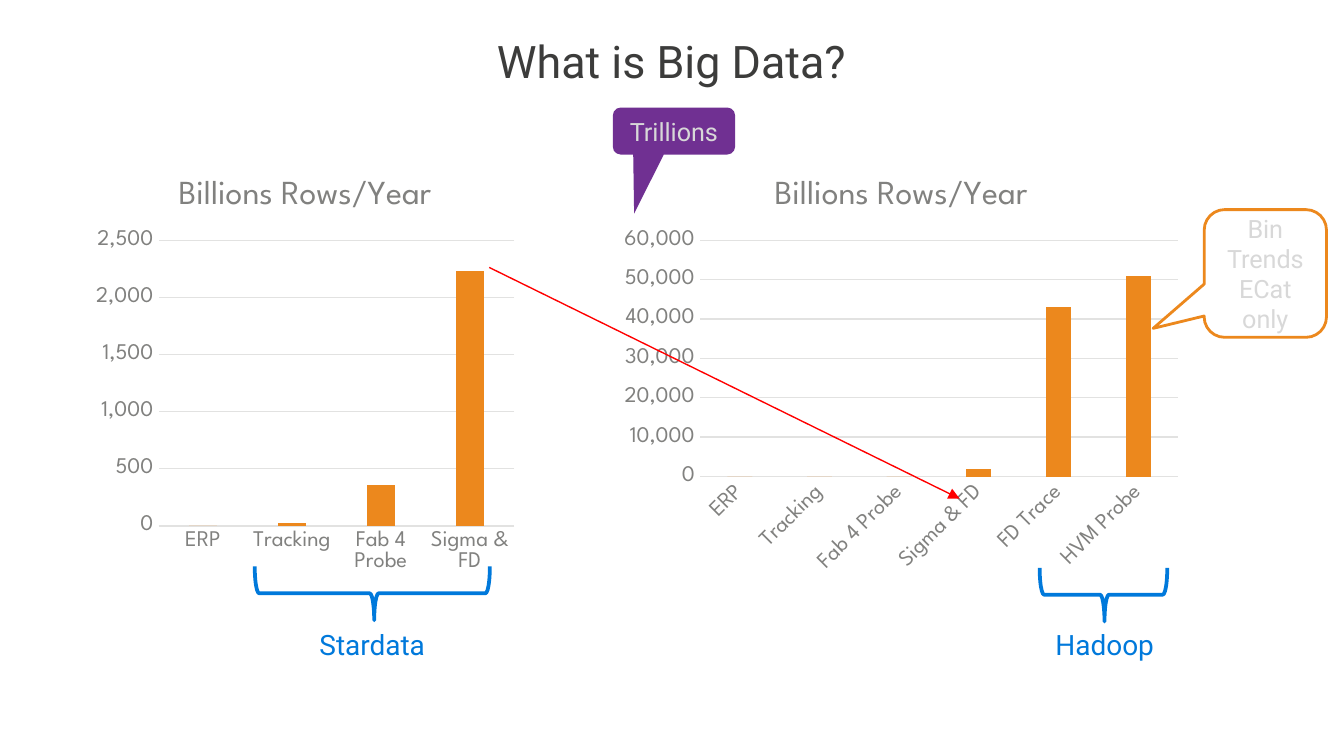
from dataclasses import dataclass
from typing import Optional

from lxml import etree
from pptx import Presentation
from pptx.chart.data import CategoryChartData
from pptx.dml.color import RGBColor
from pptx.enum.chart import XL_CHART_TYPE, XL_TICK_MARK
from pptx.enum.shapes import MSO_CONNECTOR, MSO_SHAPE
from pptx.enum.text import MSO_ANCHOR, PP_ALIGN
from pptx.oxml.ns import qn
from pptx.util import Inches, Pt

COLUMN = XL_CHART_TYPE.COLUMN_CLUSTERED
NO_TICK = XL_TICK_MARK.NONE
STRAIGHT = MSO_CONNECTOR.STRAIGHT
CALLOUT = MSO_SHAPE.ROUNDED_RECTANGULAR_CALLOUT
BRACE = MSO_SHAPE.RIGHT_BRACE
CENTER = PP_ALIGN.CENTER
TOP, MIDDLE = MSO_ANCHOR.TOP, MSO_ANCHOR.MIDDLE


@dataclass(frozen=True)
class Theme:
    font: str = "Roboto"
    chart_font: str = "League Spartan"
    dark: str = "3C3C3B"
    gray: str = "81817F"
    light: str = "D8D8D8"
    grid: str = "E2E2E1"
    white: str = "FFFFFF"
    orange: str = "EC881D"
    purple: str = "703092"
    blue: str = "0079DB"
    red: str = "FF0000"
    title: float = 24
    label: float = 15
    note: float = 13.5
    chart_title: float = 18
    axis: float = 12
    chart: float = 10


@dataclass(frozen=True)
class Box:
    left: float
    top: float
    width: float
    height: float

    def emu(self):
        return [Inches(v) for v in (self.left, self.top, self.width, self.height)]


@dataclass(frozen=True)
class RowChart:
    box: Box
    values: dict
    label_angle: int


@dataclass(frozen=True)
class Callout:
    box: Box
    lines: list
    tip: tuple
    fill: str
    line: Optional[str] = None


@dataclass(frozen=True)
class Group:
    name: str
    brace: Box
    label: Box


T = Theme()
MEASURE = "Billions Rows/Year"

CHARTS = [
    RowChart(Box(0.65, 1.15, 3.24, 3.18),
             {"ERP": 0, "Tracking": 30, "Fab 4 Probe": 360, "Sigma & FD": 2230}, 0),
    RowChart(Box(4.56, 1.15, 4.29, 3.18),
             {"ERP": 0, "Tracking": 0, "Fab 4 Probe": 0, "Sigma & FD": 2000,
              "FD Trace": 43000, "HVM Probe": 51000}, -45),
]
CALLOUTS = [
    Callout(Box(4.56, 0.8, 0.91, 0.35), ["Trillions"], (-0.326, 1.758), T.purple),
    Callout(Box(8.96, 1.56, 0.91, 0.95), ["Bin", "Trends\nECat", "only"],
            (-0.918, 0.43), T.white, T.orange),
]
GROUPS = [
    Group("Stardata", Box(2.57, 3.54, 0.4, 1.75), Box(2.21, 4.62, 1.12, 0.35)),
    Group("Hadoop", Box(8.01, 3.95, 0.4, 0.95), Box(7.49, 4.62, 1.46, 0.35)),
]


def rgb(color: str) -> RGBColor:
    return RGBColor.from_string(color)


def set_font(font, size: float, color: str, name: str) -> None:
    font.size, font.name, font.bold = Pt(size), name, False
    font.color.rgb = rgb(color)


def write(tf, lines: list, *, size: float, color: str, anchor=TOP) -> None:
    tf.word_wrap = True
    tf.vertical_anchor = anchor
    for i, line in enumerate(lines):
        p = tf.paragraphs[0] if i == 0 else tf.add_paragraph()
        p.text = line
        p.alignment = CENTER
        for r in p.runs:
            set_font(r.font, size, color, T.font)


def add_text(s, box: Box, text: str, *, size: float, color: str) -> None:
    write(s.shapes.add_textbox(*box.emu()).text_frame, [text], size=size, color=color)


def add_row_chart(s, spec: RowChart) -> None:
    data = CategoryChartData(number_format="#,##0")
    data.categories = list(spec.values)
    data.add_series(MEASURE, list(spec.values.values()))
    chart = s.shapes.add_chart(COLUMN, *spec.box.emu(), data).chart
    set_font(chart.font, T.chart, T.dark, T.chart_font)
    chart.has_legend = False
    chart.has_title = True
    p = chart.chart_title.text_frame.paragraphs[0]
    r = p.add_run()
    r.text = MEASURE
    set_font(r.font, T.chart_title, T.gray, T.chart_font)
    chart.chart_title.include_in_layout = False

    plot = chart.plots[0]
    plot.gap_width, plot.overlap, plot.vary_by_categories = 219, -27, False
    fill = plot.series[0].format.fill
    fill.solid()
    fill.fore_color.rgb = rgb(T.orange)

    cat, val = chart.category_axis, chart.value_axis
    for axis in (cat, val):
        axis.major_tick_mark = axis.minor_tick_mark = NO_TICK
        set_font(axis.tick_labels.font, T.axis, T.gray, T.chart_font)
    val.tick_labels.number_format = "#,##0"
    val.tick_labels.number_format_is_linked = False
    val.format.line.fill.background()
    val.has_major_gridlines = True
    for line in (cat.format.line, val.major_gridlines.format.line):
        line.color.rgb = rgb(T.grid)
        line.width = Pt(0.75)
    body = chart.element.xpath("c:chart/c:plotArea/c:catAx/c:txPr/a:bodyPr")[0]
    body.set("rot", str(spec.label_angle * 60000))
    body.set("vert", "horz")


def add_shape(s, kind, box: Box, adjustments: tuple, *, fill: Optional[str] = None,
              line: Optional[str] = None, width: float = 1.5):
    sp = s.shapes.add_shape(kind, *box.emu())
    sp.shadow.inherit = False
    for i, value in enumerate(adjustments):
        sp.adjustments[i] = value
    if fill:
        sp.fill.solid()
        sp.fill.fore_color.rgb = rgb(fill)
    else:
        sp.fill.background()
    if line:
        sp.line.color.rgb = rgb(line)
        sp.line.width = Pt(width)
    else:
        sp.line.fill.background()
    return sp


def add_callout(s, spec: Callout) -> None:
    sp = add_shape(s, CALLOUT, spec.box, (*spec.tip, 0.167), fill=spec.fill, line=spec.line)
    tf = sp.text_frame
    tf.margin_left = tf.margin_right = Inches(0.07)
    tf.margin_top = tf.margin_bottom = Inches(0.04)
    write(tf, spec.lines, size=T.note, color=T.light, anchor=MIDDLE)


def add_group(s, spec: Group) -> None:
    sp = add_shape(s, BRACE, spec.brace, (0.083, 0.492), line=T.blue, width=2)
    sp.rotation = 90
    add_text(s, spec.label, spec.name, size=T.label, color=T.blue)


def add_arrow(s, start: tuple, end: tuple) -> None:
    cx = s.shapes.add_connector(STRAIGHT, *[Inches(v) for v in (*start, *end)])
    cx.line.color.rgb = rgb(T.red)
    cx.line.width = Pt(0.75)
    sp_pr = cx.element.spPr
    etree.SubElement(sp_pr.find(qn("a:ln")), qn("a:tailEnd"), type="triangle")
    etree.SubElement(sp_pr, qn("a:effectLst"))


def main() -> None:
    # Widescreen page, 16:9
    prs = Presentation()
    prs.slide_width = Inches(10)
    prs.slide_height = Inches(10 * 9 / 16)
    s = prs.slides.add_slide(prs.slide_layouts[6])

    # Left chart, its note and the title
    add_row_chart(s, CHARTS[0])
    add_callout(s, CALLOUTS[0])
    add_text(s, Box(0.74, 0.2, 8.51, 0.76), "What is Big Data?", size=T.title, color=T.dark)

    # Right chart and the arrow linking the same category
    add_row_chart(s, CHARTS[1])
    add_arrow(s, (3.64, 1.99), (7.14, 3.71))

    # Storage groups and the closing note
    for group in GROUPS:
        add_group(s, group)
    add_callout(s, CALLOUTS[1])
    prs.save("out.pptx")


if __name__ == "__main__":
    main()
